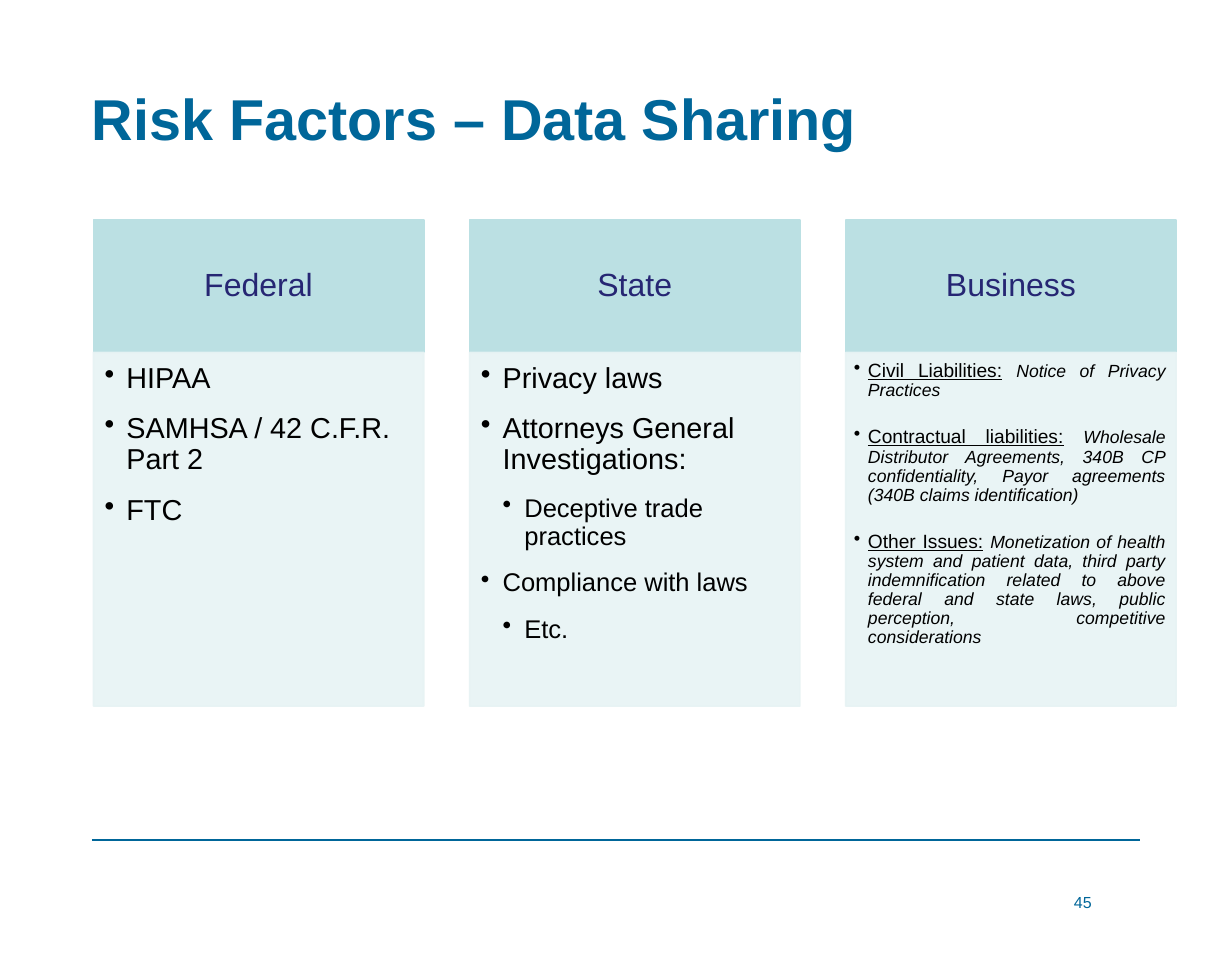
"""Build the slide on risk factors in data sharing."""
from dataclasses import dataclass

import pptx
import pptx.dml.color
import pptx.enum.shapes
import pptx.enum.text
import pptx.oxml.ns
import pptx.util
from lxml import etree

Cm = pptx.util.Cm
Pt = pptx.util.Pt
RGBColor = pptx.dml.color.RGBColor
ALIGN = pptx.enum.text.PP_ALIGN
ANCHOR = pptx.enum.text.MSO_ANCHOR

BLUE = RGBColor(0x00, 0x66, 0x99)
NAVY = RGBColor(0x26, 0x26, 0x73)
BLACK = RGBColor(0x00, 0x00, 0x00)
TEAL = RGBColor(0xBB, 0xE0, 0xE3)
PALE = RGBColor(0xE7, 0xF3, 0xF4)

LEFT, PITCH, WIDTH = 2.06, 8.3, 7.29
HEAD_TOP, HEAD_HEIGHT, BODY_HEIGHT = 4.85, 2.92, 7.8


@dataclass
class Item:
    text: str
    size: float = 18
    level: int = 1
    detail: str = ""


@dataclass
class Column:
    heading: str
    items: list[Item]
    insets: tuple[float, float, float, float] = (0.25, 0.25, 0.36, 0.4)
    indent: float = 0.48
    gap: float = 12
    align: ALIGN = ALIGN.LEFT


COLUMNS = [
    Column("Federal", [Item("HIPAA"), Item("SAMHSA / 42 C.F.R. Part 2"), Item("FTC")]),
    Column("State", [
        Item("Privacy laws"),
        Item("Attorneys General Investigations:"),
        Item("Deceptive trade practices", 16, 2),
        Item("Compliance with laws", 16),
        Item("Etc.", 16, 2),
    ]),
    Column("Business", [
        Item("Civil Liabilities:", 12, detail="Notice of Privacy Practices"),
        Item("Contractual liabilities:", 12,
             detail="Wholesale Distributor Agreements, 340B CP confidentiality, "
                    "Payor agreements (340B claims identification)"),
        Item("Other Issues:", 12,
             detail="Monetization of health system and patient data, third party "
                    "indemnification related to above federal and state laws, "
                    "public perception, competitive considerations"),
    ], (0.18, 0.18, 0.23, 0.25), 0.31, 16.8, ALIGN.JUSTIFY),
]


def add_run(p, text: str, *, size: float, color: RGBColor = BLACK, bold: bool = False,
            italic: bool = False, underline: bool = False) -> None:
    """Append formatted text to a paragraph."""
    r = p.add_run()
    r.text = text
    f = r.font
    f.name, f.size, f.color.rgb = "Arial", Pt(size), color
    f.bold, f.italic, f.underline = bold, italic, underline


def set_frame(tf, insets: tuple[float, float, float, float], anchor: ANCHOR) -> None:
    """Set wrapping, margins and vertical anchor of a text frame."""
    tf.word_wrap = True
    tf.vertical_anchor = anchor
    tf.margin_left, tf.margin_top, tf.margin_right, tf.margin_bottom = map(Cm, insets)


def add_panel(s, left: float, top: float, height: float, color: RGBColor):
    """Add a filled rectangle one column wide."""
    sp = s.shapes.add_shape(pptx.enum.shapes.MSO_SHAPE.RECTANGLE,
                            Cm(left), Cm(top), Cm(WIDTH), Cm(height))
    sp.shadow.inherit = False
    sp.fill.solid()
    sp.fill.fore_color.rgb = color
    sp.line.color.rgb = color
    sp.line.width = Pt(1)
    return sp


def add_text_box(s, box: tuple[float, float, float, float],
                 insets: tuple[float, float, float, float], anchor: ANCHOR):
    """Add a text box and return its first paragraph."""
    tf = s.shapes.add_textbox(*map(Cm, box)).text_frame
    set_frame(tf, insets, anchor)
    return tf.paragraphs[0]


def set_bullet(p, level: int, indent: float) -> None:
    """Give a paragraph a hanging round bullet."""
    pPr = p._p.get_or_add_pPr()
    pPr.set("marL", str(Cm(indent * level)))
    pPr.set("indent", str(-Cm(indent)))
    etree.SubElement(pPr, pptx.oxml.ns.qn("a:buChar")).set("char", "•")


def add_column(s, column: Column, left: float) -> None:
    """Draw one heading panel with its bulleted body."""
    tf = add_panel(s, left, HEAD_TOP, HEAD_HEIGHT, TEAL).text_frame
    set_frame(tf, (0.4, 0.23, 0.4, 0.23), ANCHOR.MIDDLE)
    p = tf.paragraphs[0]
    p.alignment, p.line_spacing = ALIGN.CENTER, 0.9
    add_run(p, column.heading, size=20, color=NAVY)

    sp = add_panel(s, left, HEAD_TOP + HEAD_HEIGHT, BODY_HEIGHT, PALE)
    for clr in sp._element.spPr.iter(pptx.oxml.ns.qn("a:srgbClr")):
        etree.SubElement(clr, pptx.oxml.ns.qn("a:alpha")).set("val", "90000")
    tf = sp.text_frame
    set_frame(tf, column.insets, ANCHOR.TOP)
    for i, item in enumerate(column.items):
        p = tf.add_paragraph() if i else tf.paragraphs[0]
        set_bullet(p, item.level, column.indent)
        p.alignment, p.line_spacing = column.align, 0.9
        p.space_after = Pt(column.gap)
        add_run(p, item.text, size=item.size, underline=bool(item.detail))
        if item.detail:
            add_run(p, " ", size=item.size)
            add_run(p, item.detail, size=11, italic=True)


def main() -> None:
    """Build and save the slide."""
    prs = pptx.Presentation()
    prs.slide_width, prs.slide_height = Cm(27.18), Cm(21.08)
    s = prs.slides.add_slide(prs.slide_layouts[6])

    rule = s.shapes.add_connector(pptx.enum.shapes.MSO_CONNECTOR.STRAIGHT,
                                  Cm(2.03), Cm(18.52), Cm(25.15), Cm(18.52))
    rule.line.color.rgb = BLUE
    rule.line.width = Pt(1)
    etree.SubElement(rule._element.spPr, pptx.oxml.ns.qn("a:effectLst"))

    p = add_text_box(s, (2.03, 0, 23.11, 3.76), (0, 0, 0, 0.4), ANCHOR.BOTTOM)
    p.alignment, p.line_spacing = ALIGN.LEFT, Pt(38.9)
    add_run(p, "Risk Factors – Data Sharing", size=36, color=BLUE, bold=True)

    for i, column in enumerate(COLUMNS):
        add_column(s, column, LEFT + i * PITCH)

    p = add_text_box(s, (21.06, 19.56, 5.66, 1.12), (0.28, 0.13, 0.28, 0.13), ANCHOR.TOP)
    p.alignment = ALIGN.CENTER
    add_run(p, "45", size=10, color=BLUE)

    prs.save("out.pptx")


if __name__ == "__main__":
    main()
